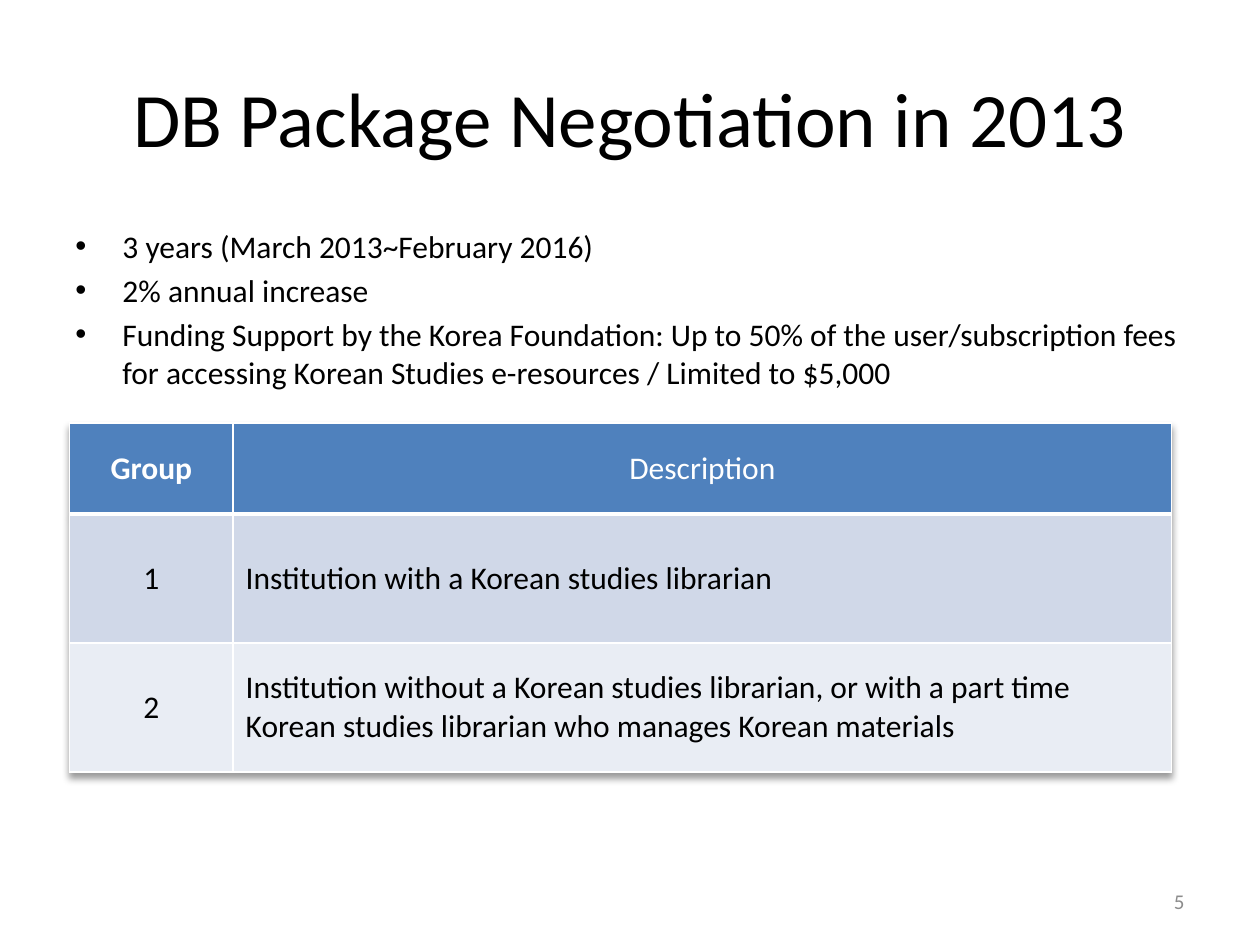
from lxml import etree
from pptx import Presentation
from pptx.dml.color import RGBColor
from pptx.enum.text import MSO_ANCHOR, PP_ALIGN
from pptx.oxml import parse_xml
from pptx.oxml.ns import nsdecls, qn
from pptx.util import Cm, Pt

LEFT, CENTER, RIGHT = PP_ALIGN.LEFT, PP_ALIGN.CENTER, PP_ALIGN.RIGHT
TOP, MIDDLE = MSO_ANCHOR.TOP, MSO_ANCHOR.MIDDLE

FONT = "Calibri"
COLORS = {
    "text": "000000",
    "number": "8C8C8C",
    "white": "FFFFFF",
    "header": "4F81BD",
    "band_dark": "D0D8E8",
    "band_light": "E9EDF4",
}
BULLETS = [
    "3 years (March 2013~February 2016)",
    "2% annual increase",
    "Funding Support by the Korea Foundation: Up to 50% of the user/subscription fees "
    "for accessing Korean Studies e-resources / Limited to $5,000",
]
GROUPS = [
    ("Group", "Description"),
    ("1", "Institution with a Korean studies librarian"),
    ("2", "Institution without a Korean studies librarian, or with a part time "
          "Korean studies librarian who manages Korean materials"),
]
ROW_FILLS = ["header", "band_dark", "band_light"]
COLUMN_WIDTHS = [Cm(3.3), Cm(18.92)]
ROW_HEIGHTS = [Cm(1.83), Cm(2.6), Cm(2.6)]


def write(para, text, size=18, color="text", bold=False, align=LEFT):
    para.alignment = align
    span = para.add_run()
    span.text = text
    span.font.name = FONT
    span.font.size = Pt(size)
    span.font.bold = bold
    span.font.color.rgb = RGBColor.from_string(COLORS[color])


def add_box(page, left, top, width, height, anchor=MIDDLE):
    """Add an empty wrapping text box and return its text frame."""
    frame = page.shapes.add_textbox(left, top, width, height).text_frame
    frame.word_wrap = True
    frame.vertical_anchor = anchor
    return frame


def make_bullet(para):
    para.space_before = Pt(3.6)
    properties = para._p.get_or_add_pPr()
    indent = Cm(0.95)
    properties.set("marL", str(indent))
    properties.set("indent", str(-indent))
    etree.SubElement(properties, qn("a:buFont"), typeface="Arial")
    etree.SubElement(properties, qn("a:buChar"), char="•")


def add_bullets(page, lines):
    frame = add_box(page, Cm(1.27), Cm(4.45), Cm(22.86), Cm(12.57), anchor=TOP)
    for index, line in enumerate(lines):
        para = frame.add_paragraph() if index else frame.paragraphs[0]
        make_bullet(para)
        write(para, line)


def set_borders(cell, bottom_width):
    properties = cell._tc.get_or_add_tcPr()
    for side, width in (("L", 1), ("R", 1), ("T", 1), ("B", bottom_width)):
        properties.append(parse_xml(
            f'<a:ln{side} {nsdecls("a")} w="{Pt(width)}"><a:solidFill>'
            f'<a:srgbClr val="{COLORS["white"]}"/></a:solidFill></a:ln{side}>'))


def add_table_shadow(table):
    table._tbl.tblPr.insert(0, parse_xml(
        f'<a:effectLst {nsdecls("a")}><a:outerShdw blurRad="{Pt(4)}" dist="{Pt(3)}" '
        f'dir="5400000" rotWithShape="0"><a:srgbClr val="{COLORS["text"]}">'
        '<a:alpha val="40000"/></a:srgbClr></a:outerShdw></a:effectLst>'))


def add_group_table(page):
    table = page.shapes.add_table(
        len(GROUPS), len(COLUMN_WIDTHS), Cm(1.4), Cm(8.53),
        sum(COLUMN_WIDTHS), sum(ROW_HEIGHTS)).table
    add_table_shadow(table)
    for column, width in zip(table.columns, COLUMN_WIDTHS):
        column.width = width
    for row, height in zip(table.rows, ROW_HEIGHTS):
        row.height = height
    for row_index, texts in enumerate(GROUPS):
        is_header = row_index == 0
        for column_index, text in enumerate(texts):
            is_group = column_index == 0
            cell = table.cell(row_index, column_index)
            cell.vertical_anchor = MIDDLE
            set_borders(cell, bottom_width=3 if is_header else 1)
            cell.fill.solid()
            cell.fill.fore_color.rgb = RGBColor.from_string(COLORS[ROW_FILLS[row_index]])
            write(cell.text_frame.paragraphs[0], text,
                  color="white" if is_header else "text",
                  bold=is_header and is_group,
                  align=CENTER if is_header or is_group else LEFT)


def main():
    deck = Presentation()
    deck.slide_width, deck.slide_height = Cm(25.4), Cm(19.05)
    page = deck.slides.add_slide(deck.slide_layouts[6])

    title = add_box(page, Cm(1.27), Cm(0.76), Cm(22.86), Cm(3.18))
    write(title.paragraphs[0], "DB Package Negotiation in 2013", size=44, align=CENTER)
    add_bullets(page, BULLETS)
    add_group_table(page)
    number = add_box(page, Cm(18.21), Cm(17.65), Cm(5.92), Cm(1.02))
    write(number.paragraphs[0], "5", size=12, color="number", align=RIGHT)

    deck.save("out.pptx")


if __name__ == "__main__":
    main()
